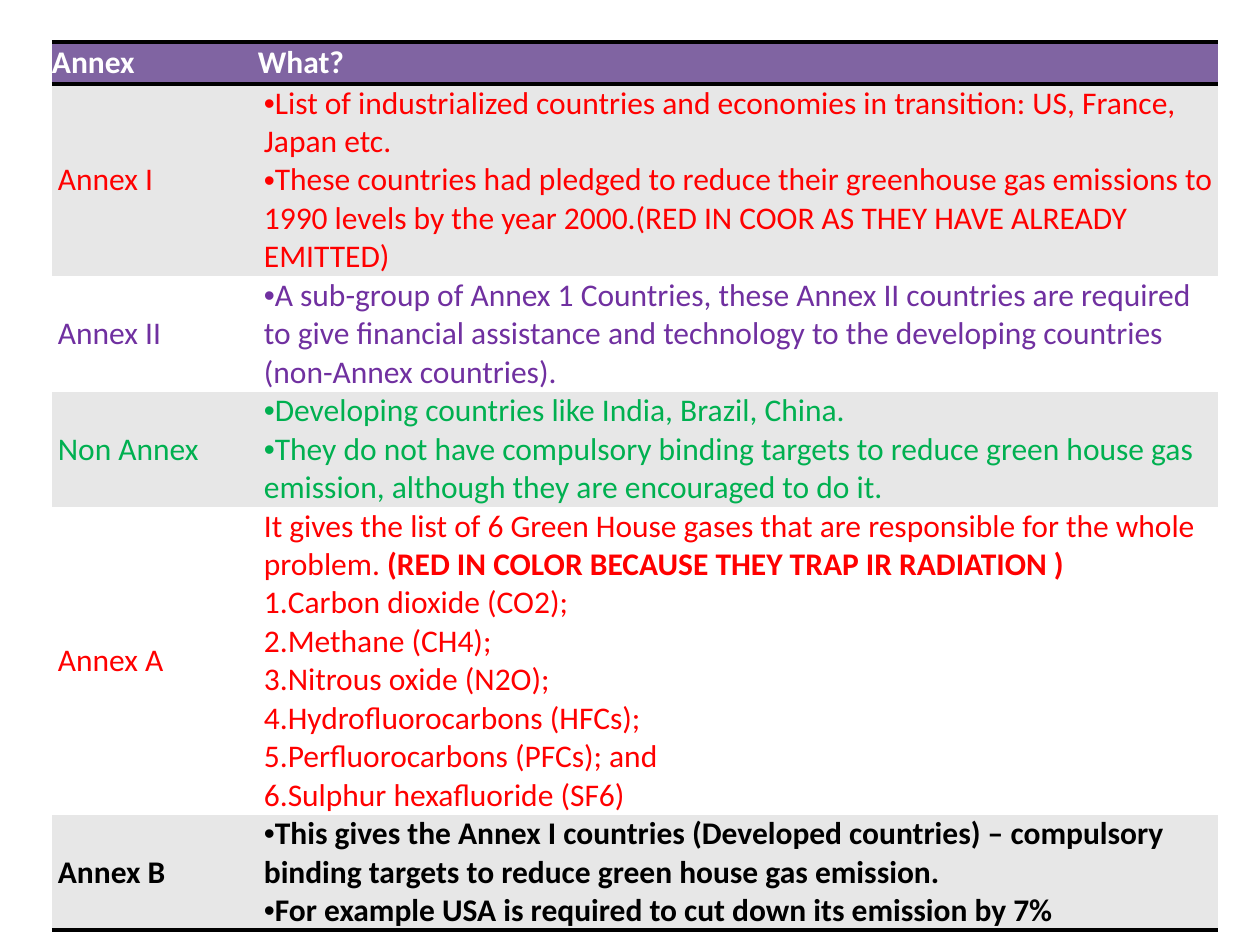
from lxml.etree import SubElement
from pptx import Presentation
from pptx.dml.color import RGBColor
from pptx.enum.text import MSO_ANCHOR
from pptx.oxml import parse_xml
from pptx.oxml.ns import nsdecls, qn
from pptx.util import Pt

SCALE = 914400 / 126
WHITE = RGBColor(0xFF, 0xFF, 0xFF)
BLACK = RGBColor(0, 0, 0)
RED = RGBColor(0xFF, 0, 0)
VIOLET = RGBColor(0x70, 0x30, 0xA0)
GREEN = RGBColor(0, 0xB0, 0x50)
HEADER_FILL = RGBColor(0x80, 0x64, 0xA2)
BAND_FILL = RGBColor(0xE7, 0xE7, 0xE7)

COLUMN_WIDTHS = (206, 960)
HEADER_HEIGHT = 42
LINE_HEIGHT = 38
INSET = 6
BULLET, NUMBER = "bullet", "number"

# Annex, colour, bold, lines of text, paragraphs as (marker, text, bold ending)
ANNEXES = [
    ("Annex I", RED, False, 5, [
        (BULLET, "List of industrialized countries and economies in transition: "
                 "US, France, Japan etc.", ""),
        (BULLET, "These countries had pledged to reduce their greenhouse gas emissions to "
                 "1990 levels by the year 2000.(RED IN COOR AS THEY HAVE ALREADY EMITTED)", ""),
    ]),
    ("Annex II", VIOLET, False, 3, [
        (BULLET, "A sub-group of Annex 1 Countries, these Annex II countries are required "
                 "to give financial assistance and technology to the developing countries "
                 "(non-Annex countries).", ""),
    ]),
    ("Non Annex", GREEN, False, 3, [
        (BULLET, "Developing countries like India, Brazil, China.", ""),
        (BULLET, "They do not have compulsory binding targets to reduce green house gas "
                 "emission, although they are encouraged to do it.", ""),
    ]),
    ("Annex A", RED, False, 8, [
        (None, "It gives the list of 6 Green House gases that are responsible for the whole "
               "problem. ", "(RED IN COLOR BECAUSE THEY TRAP IR RADIATION )"),
        (NUMBER, "Carbon dioxide (CO2);", ""),
        (NUMBER, "Methane (CH4);", ""),
        (NUMBER, "Nitrous oxide (N2O);", ""),
        (NUMBER, "Hydrofluorocarbons (HFCs);", ""),
        (NUMBER, "Perfluorocarbons (PFCs); and", ""),
        (NUMBER, "Sulphur hexafluoride (SF6)", ""),
    ]),
    ("Annex B", BLACK, True, 3, [
        (BULLET, "This gives the Annex I countries (Developed countries) – compulsory "
                 "binding targets to reduce green house gas emission.", ""),
        (BULLET, "For example USA is required to cut down its emission by 7%", ""),
    ]),
]


def px(length):
    return round(length * SCALE)


def set_marker(paragraph, marker):
    properties = paragraph._p.get_or_add_pPr()
    properties.set("marL", "0")
    properties.set("indent", "0")
    if marker == BULLET:
        SubElement(properties, qn("a:buFont"), typeface="Arial")
        SubElement(properties, qn("a:buChar"), char="•")
    elif marker == NUMBER:
        SubElement(properties, qn("a:buFont"), typeface="+mj-lt")
        SubElement(properties, qn("a:buAutoNum"), type="arabicPeriod")


def set_borders(cell, ruled_sides):
    """Rule the named sides (T, B) in black and clear the others."""
    properties = cell._tc.get_or_add_tcPr()
    for index, side in enumerate("LRTB"):
        paint = "<a:noFill/>"
        if side in ruled_sides:
            paint = f'<a:solidFill><a:srgbClr val="{BLACK}"/></a:solidFill>'
        border = parse_xml(f'<a:ln{side} {nsdecls("a")} w="{Pt(2)}">{paint}</a:ln{side}>')
        properties.insert(index, border)


def fill_cell(cell, paragraphs, color, bold, fill, inset, ruled_sides):
    cell.margin_left = px(inset)
    cell.margin_right = cell.margin_top = cell.margin_bottom = 0
    cell.vertical_anchor = MSO_ANCHOR.MIDDLE
    cell.fill.solid()
    cell.fill.fore_color.rgb = fill
    set_borders(cell, ruled_sides)
    frame = cell.text_frame
    for index, (marker, text, bold_ending) in enumerate(paragraphs):
        paragraph = frame.add_paragraph() if index else frame.paragraphs[0]
        set_marker(paragraph, marker)
        font = paragraph.font
        font.name, font.size, font.bold = "Calibri", Pt(18), bold
        font.color.rgb = color
        paragraph.add_run().text = text
        if bold_ending:
            run = paragraph.add_run()
            run.text = bold_ending
            run.font.bold = True


def add_annex_table(slide, left, top):
    heights = [HEADER_HEIGHT] + [annex[3] * LINE_HEIGHT for annex in ANNEXES]
    table = slide.shapes.add_table(
        len(heights), len(COLUMN_WIDTHS), px(left), px(top),
        px(sum(COLUMN_WIDTHS)), px(sum(heights))).table
    table.first_row = table.horz_banding = False
    for column, width in zip(table.columns, COLUMN_WIDTHS):
        column.width = px(width)
    for row, height in zip(table.rows, heights):
        row.height = px(height)

    for cell, title in zip(table.rows[0].cells, ("Annex", "What?")):
        fill_cell(cell, [(None, title, "")], WHITE, True, HEADER_FILL, 0, "TB")
    for number, (name, color, bold, _, description) in enumerate(ANNEXES, 1):
        fill = BAND_FILL if number % 2 else WHITE
        ruled_sides = {1: "T", len(ANNEXES): "B"}.get(number, "")
        for cell, paragraphs in zip(table.rows[number].cells,
                                    ([(None, name, "")], description)):
            fill_cell(cell, paragraphs, color, bold, fill, INSET, ruled_sides)


def main():
    presentation = Presentation()
    presentation.slide_width, presentation.slide_height = px(1260), px(945)
    slide = presentation.slides.add_slide(presentation.slide_layouts[6])
    add_annex_table(slide, 52, 42)
    presentation.save("out.pptx")


if __name__ == "__main__":
    main()
